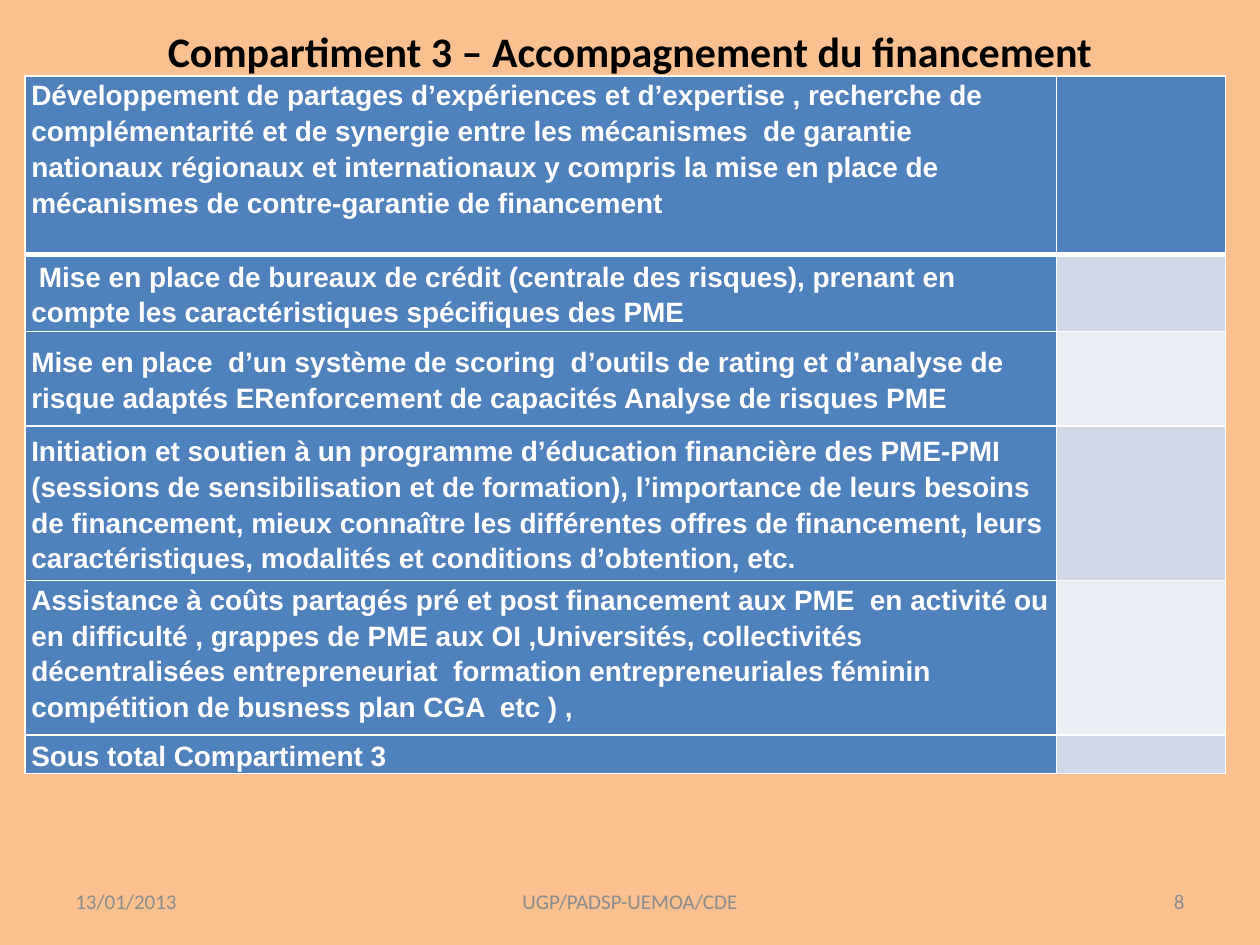
from dataclasses import dataclass
from typing import Any

from lxml.etree import SubElement
from pptx import Presentation
from pptx.dml.color import RGBColor
from pptx.enum.text import MSO_ANCHOR, PP_ALIGN
from pptx.oxml.ns import qn
from pptx.util import Cm, Pt

ROWS = [
    (3.6, MSO_ANCHOR.TOP, "Développement de partages d’expériences et d’expertise , recherche de "
     "complémentarité et de synergie entre les mécanismes  de garantie nationaux régionaux et "
     "internationaux y compris la mise en place de mécanismes de contre-garantie de financement"),
    (1.45, MSO_ANCHOR.MIDDLE, " Mise en place de bureaux de crédit (centrale des risques), prenant en "
     "compte les caractéristiques spécifiques des PME"),
    (1.9, MSO_ANCHOR.MIDDLE, "Mise en place  d’un système de scoring  d’outils de rating et d’analyse de "
     "risque adaptés ERenforcement de capacités Analyse de risques PME"),
    (2.89, MSO_ANCHOR.MIDDLE, "Initiation et soutien à un programme d’éducation financière des PME-PMI "
     "(sessions de sensibilisation et de formation), l’importance de leurs besoins de financement, "
     "mieux connaître les différentes offres de financement, leurs caractéristiques, modalités et "
     "conditions d’obtention, etc."),
    (2.89, MSO_ANCHOR.TOP, "Assistance à coûts partagés pré et post financement aux PME  en activité ou "
     "en difficulté , grappes de PME aux OI ,Universités, collectivités décentralisées entrepreneuriat  "
     "formation entrepreneuriales féminin compétition de busness plan CGA  etc ) ,"),
    (0.72, MSO_ANCHOR.MIDDLE, "Sous total Compartiment 3"),
]


def color(value):
    """Return the colour of a hex string."""
    return RGBColor.from_string(value)


@dataclass
class Deck:
    """Hold the style and the current slide."""
    s: Any
    heading: str = "Calibri"
    body: str = "Arial"
    blue: str = "4F81BD"
    bands: tuple = ("D0D8E8", "E9EDF4")
    white: str = "FFFFFF"
    grey: str = "8C8C8C"

    def background(self, value):
        """Fill the slide background."""
        fill = self.s.background.fill
        fill.solid()
        fill.fore_color.rgb = color(value)

    def run(self, p, text, size, font, value, bold=False):
        """Add a styled run to a paragraph."""
        r = p.add_run()
        r.text = text
        r.font.size, r.font.name, r.font.bold = Pt(size), font, bold
        r.font.color.rgb = color(value)

    def text(self, box, text, size, value, align, bold=False):
        """Add a one-line text box."""
        tf = self.s.shapes.add_textbox(*map(Cm, box)).text_frame
        tf.word_wrap = True
        tf.vertical_anchor = MSO_ANCHOR.MIDDLE
        p = tf.paragraphs[0]
        p.alignment = align
        self.run(p, text, size, self.heading, value, bold)

    def cell(self, cell, fill, top, bottom):
        """Set the margins, borders and fill of a cell."""
        cell.margin_left = cell.margin_right = Cm(0.13)
        cell.margin_top = cell.margin_bottom = 0
        tcPr = cell._tc.get_or_add_tcPr()
        for side, width in zip("LRTB", (1, 1, top, bottom)):
            ln = SubElement(tcPr, qn(f"a:ln{side}"), w=str(Pt(width)))
            SubElement(SubElement(ln, qn("a:solidFill")), qn("a:srgbClr"), val=self.white)
        cell.fill.solid()
        cell.fill.fore_color.rgb = color(fill)

    def table(self, left, top, widths, rows):
        """Add the table of actions with an empty second column."""
        height = sum(row[0] for row in rows)
        table = self.s.shapes.add_table(len(rows), len(widths), Cm(left), Cm(top),
                                        Cm(sum(widths)), Cm(height)).table
        for column, width in zip(table.columns, widths):
            column.width = Cm(width)
        for i, (height, anchor, text) in enumerate(rows):
            table.rows[i].height = Cm(height)
            label, amount = table.cell(i, 0), table.cell(i, 1)
            edges = (3 if i == 1 else 1, 3 if i == 0 else 1)
            self.cell(label, self.blue, *edges)
            self.cell(amount, self.bands[(i - 1) % 2] if i else self.blue, *edges)
            label.vertical_anchor = anchor
            p = label.text_frame.paragraphs[0]
            p.line_spacing = 1.15
            self.run(p, text, 16, self.body, self.white, True)
            SubElement(amount.text_frame.paragraphs[0]._p, qn("a:endParaRPr"), sz="1200")


def main():
    """Build the slide and save it."""
    prs = Presentation()
    prs.slide_width, prs.slide_height = Cm(25.4), Cm(19.05)
    deck = Deck(prs.slides.add_slide(prs.slide_layouts[6]))
    deck.background("FAC090")
    deck.text((1.27, 0.33, 22.86, 1.4), "Compartiment 3 – Accompagnement du financement",
              24, "000000", PP_ALIGN.CENTER, True)
    deck.table(0.5, 1.53, (20.8, 3.4), ROWS)
    for left, width, text, align in (
        (1.27, 5.92, "13/01/2013", PP_ALIGN.LEFT),
        (8.68, 8.04, "UGP/PADSP-UEMOA/CDE", PP_ALIGN.CENTER),
        (18.21, 5.92, "8", PP_ALIGN.RIGHT),
    ):
        deck.text((left, 17.66, width, 1.01), text, 12, deck.grey, align)
    prs.save("out.pptx")


if __name__ == "__main__":
    main()
